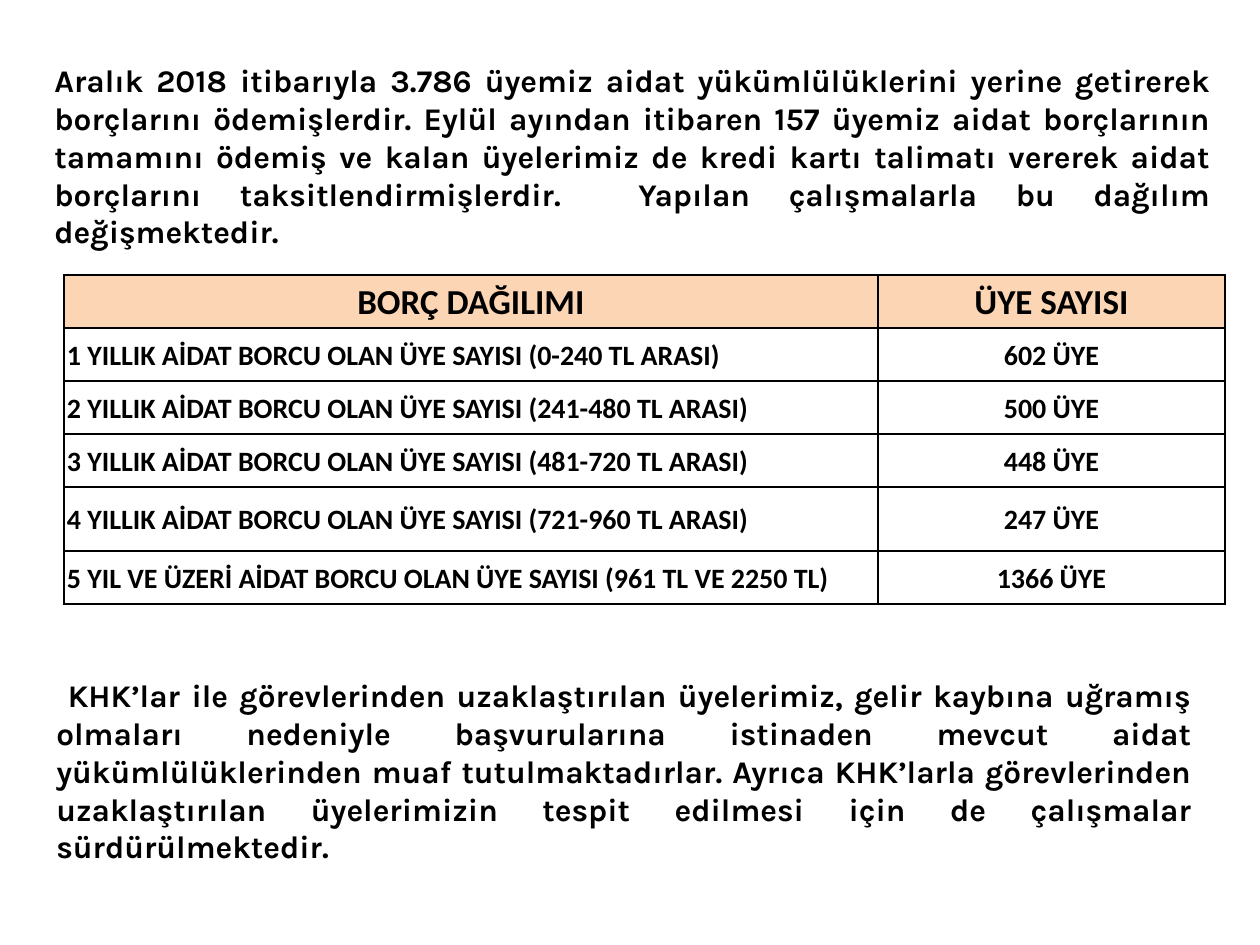
from lxml import etree
from pptx import Presentation
from pptx.dml.color import RGBColor
from pptx.enum.text import MSO_ANCHOR, MSO_AUTO_SIZE, PP_ALIGN
from pptx.oxml.ns import qn
from pptx.util import Emu, Pt

EMU_PER_PX = 914400 / 126
BLACK = RGBColor(0x00, 0x00, 0x00)
PEACH = RGBColor(0xFC, 0xD5, 0xB4)
LEFT, CENTER, JUSTIFY = PP_ALIGN.LEFT, PP_ALIGN.CENTER, PP_ALIGN.JUSTIFY
MIDDLE = MSO_ANCHOR.MIDDLE
GROW = MSO_AUTO_SIZE.SHAPE_TO_FIT_TEXT
BLANK_LAYOUT = 6

PAYMENT_TEXT = (
    "Aralık 2018 itibarıyla 3.786 üyemiz aidat yükümlülüklerini yerine getirerek "
    "borçlarını ödemişlerdir. Eylül ayından itibaren 157 üyemiz aidat borçlarının "
    "tamamını ödemiş ve kalan üyelerimiz de kredi kartı talimatı vererek aidat "
    "borçlarını taksitlendirmişlerdir.  Yapılan çalışmalarla bu dağılım "
    "değişmektedir. "
)
EXEMPTION_TEXT = (
    " KHK’lar ile görevlerinden uzaklaştırılan üyelerimiz, gelir kaybına uğramış "
    "olmaları nedeniyle başvurularına istinaden mevcut aidat yükümlülüklerinden "
    "muaf tutulmaktadırlar. Ayrıca KHK’larla görevlerinden uzaklaştırılan "
    "üyelerimizin tespit edilmesi için de çalışmalar sürdürülmektedir."
)
DEBT_ROWS = [
    ("BORÇ DAĞILIMI", "ÜYE SAYISI"),
    ("1 YILLIK AİDAT BORCU OLAN ÜYE SAYISI (0-240 TL ARASI)", "602 ÜYE"),
    ("2 YILLIK AİDAT BORCU OLAN ÜYE SAYISI (241-480 TL ARASI)", "500 ÜYE"),
    ("3 YILLIK AİDAT BORCU OLAN ÜYE SAYISI (481-720 TL ARASI)", "448 ÜYE"),
    ("4 YILLIK AİDAT BORCU OLAN ÜYE SAYISI (721-960 TL ARASI)", "247 ÜYE"),
    ("5 YIL VE ÜZERİ AİDAT BORCU OLAN ÜYE SAYISI (961 TL VE 2250 TL)", "1366 ÜYE"),
]
COLUMN_WIDTHS = [814, 347]
ROW_HEIGHTS = [53, 53, 53, 53, 64, 53]


def px(length):
    """Turn a length in px into EMU."""
    return Emu(round(length * EMU_PER_PX))


def write_text(text_frame, text, font="Calibri", size=16, align=LEFT, line_spacing=None):
    """Write one bold black paragraph into a text frame."""
    paragraph = text_frame.paragraphs[0]
    paragraph.alignment = align
    paragraph.line_spacing = line_spacing
    run = paragraph.add_run()
    run.text = text
    run.font.name = font
    run.font.size = Pt(size)
    run.font.bold = True
    run.font.color.rgb = BLACK


def add_body_text(slide, text, left, top, width, height):
    """Add a justified text box that grows with its text."""
    text_frame = slide.shapes.add_textbox(px(left), px(top), px(width), px(height)).text_frame
    text_frame.word_wrap = True
    text_frame.auto_size = GROW
    write_text(text_frame, text, font="Karla", size=18, align=JUSTIFY)


def add_borders(cell):
    """Draw a thin black line on every side of a cell."""
    properties = cell._tc.get_or_add_tcPr()
    for position, side in enumerate(("a:lnL", "a:lnR", "a:lnT", "a:lnB")):
        line = etree.Element(qn(side), w=str(Pt(1)))
        fill = etree.SubElement(line, qn("a:solidFill"))
        etree.SubElement(fill, qn("a:srgbClr"), val=str(BLACK))
        properties.insert(position, line)


def format_cell(cell, text, is_header, align):
    """Fill, border and write one table cell."""
    cell.margin_left = cell.margin_right = px(3)
    cell.margin_top = cell.margin_bottom = 0
    cell.vertical_anchor = MIDDLE
    if is_header:
        cell.fill.solid()
        cell.fill.fore_color.rgb = PEACH
    else:
        cell.fill.background()
    add_borders(cell)
    write_text(cell.text_frame, text, size=20 if is_header else 16, align=align,
               line_spacing=1.07)


def add_debt_table(slide, left, top):
    """Add the table of debt bands and member counts."""
    frame = slide.shapes.add_table(
        len(DEBT_ROWS), len(COLUMN_WIDTHS), px(left), px(top),
        px(sum(COLUMN_WIDTHS)), px(sum(ROW_HEIGHTS)))
    table = frame.table
    table.horz_banding = False
    for column, width in zip(table.columns, COLUMN_WIDTHS):
        column.width = px(width)
    for row_index, (row, height) in enumerate(zip(table.rows, ROW_HEIGHTS)):
        row.height = px(height)
        is_header = row_index == 0
        for column_index, text in enumerate(DEBT_ROWS[row_index]):
            align = CENTER if is_header or column_index else LEFT
            format_cell(table.cell(row_index, column_index), text, is_header, align)


def main():
    """Build the slide on dues and debts and save it."""
    presentation = Presentation()
    presentation.slide_width = px(1260)
    presentation.slide_height = px(945)
    slide = presentation.slides.add_slide(presentation.slide_layouts[BLANK_LAYOUT])
    add_debt_table(slide, 64, 275)
    add_body_text(slide, PAYMENT_TEXT, 42, 55, 1181, 165)
    add_body_text(slide, EXEMPTION_TEXT, 44, 670, 1160, 204)
    presentation.save("out.pptx")


if __name__ == "__main__":
    main()
